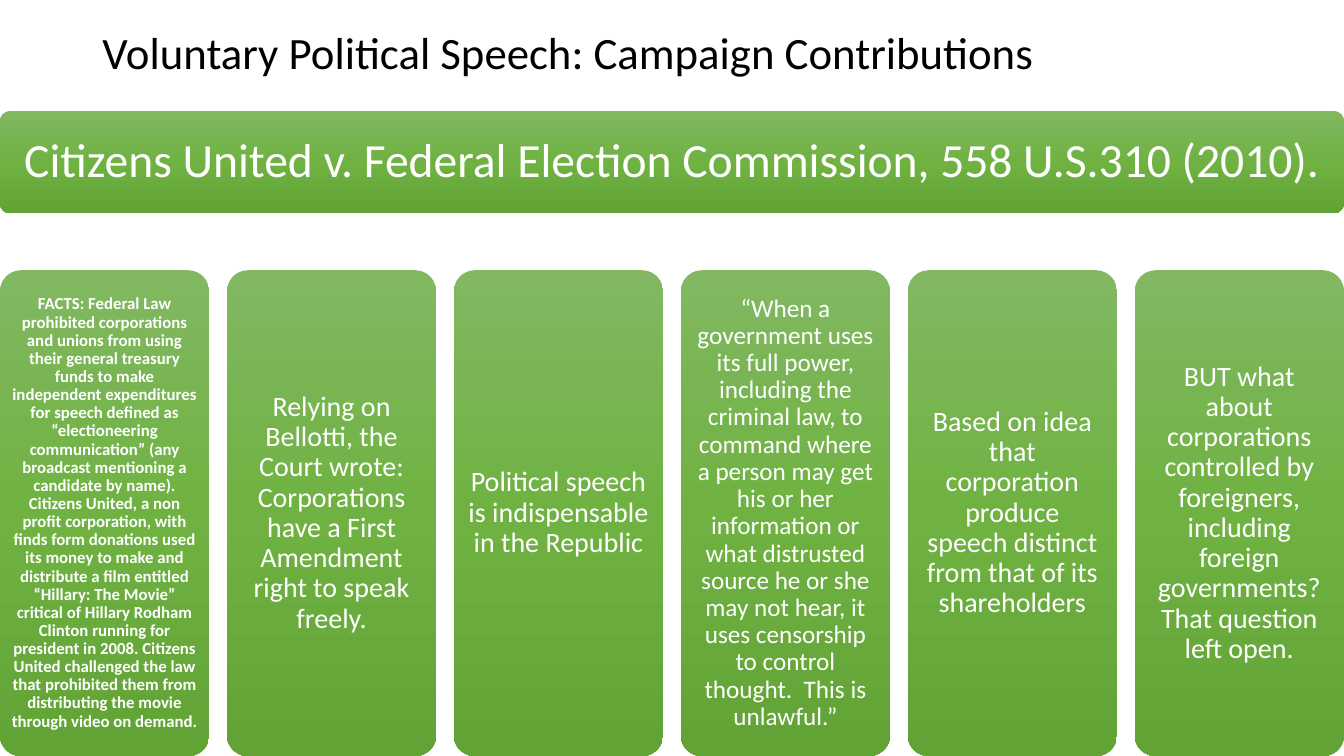
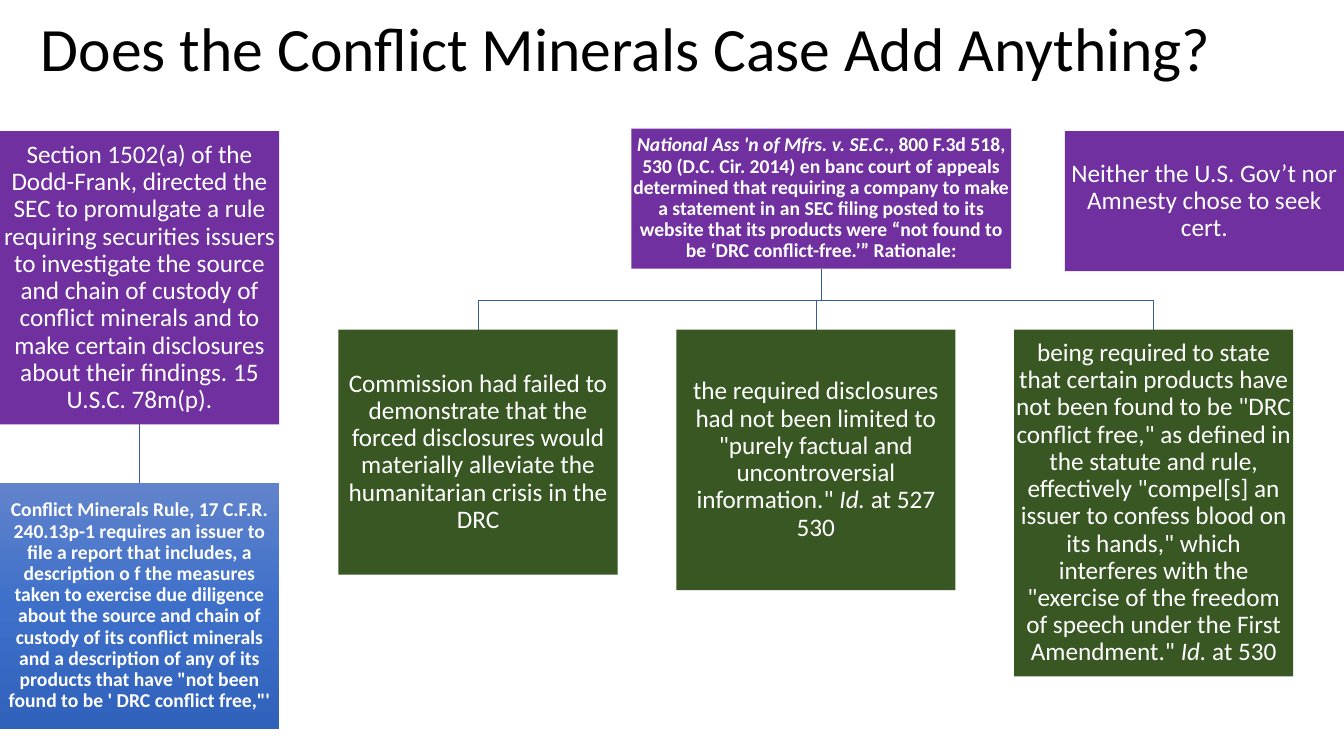
from copy import deepcopy

from pptx import Presentation
from pptx.dml.color import RGBColor as RGB
from pptx.enum.shapes import MSO_CONNECTOR as Link, MSO_SHAPE as Kind
from pptx.enum.text import MSO_ANCHOR as Anchor, MSO_AUTO_SIZE as Auto, PP_ALIGN as Align
from pptx.oxml.ns import qn
from pptx.util import Pt

# Shared style
WHITE = RGB(0xFF, 0xFF, 0xFF)
BLACK = RGB(0x00, 0x00, 0x00)
PURPLE = RGB(0x70, 0x30, 0xA0)
FOREST = RGB(0x38, 0x57, 0x23)
LINE = RGB(0x36, 0x5B, 0x9D)
GREEN = (RGB(0x81, 0xB8, 0x61), RGB(0x6F, 0xB2, 0x42), RGB(0x62, 0xA3, 0x36))
BLUE = (RGB(0x61, 0x83, 0xCB), RGB(0x3E, 0x70, 0xCA), RGB(0x30, 0x62, 0xBB))
FONT = "Calibri"
WIDE, HIGH = 960, 540

# Slide 1 content: text, size, bold
SPEECH = "Voluntary Political Speech: Campaign Contributions"
CASE = "Citizens United v. Federal Election Commission, 558 U.S.310 (2010)."
POINTS = [
    ("FACTS: Federal Law prohibited corporations and unions from using their "
     "general treasury funds to make independent expenditures for speech defined "
     "as “electioneering communication” (any broadcast mentioning a candidate by "
     "name). Citizens United, a non profit corporation, with finds form donations "
     "used its money to make and distribute a film entitled “Hillary: The Movie” "
     "critical of Hillary Rodham Clinton running for president in 2008. Citizens "
     "United challenged the law that prohibited them from distributing the movie "
     "through video on demand.", 12, True),
    ("Relying on Bellotti, the Court wrote: Corporations have a First Amendment "
     "right to speak freely.", 20, False),
    ("Political speech is indispensable in the Republic", 20, False),
    ("“When a government uses its full power, including the criminal law, to "
     "command where a person may get his or her information or what distrusted "
     "source he or she may not hear, it uses censorship to control thought.  This "
     "is unlawful.”", 18, False),
    ("Based on idea that corporation produce speech distinct from that of its "
     "shareholders", 20, False),
    ("BUT what about corporations controlled by foreigners, including foreign "
     "governments? That question left open.", 20, False),
]

# Slide 2 content: words between asterisks are italic
MINERALS = "Does the Conflict Minerals Case Add Anything?"
STATUTE = ("Section 1502(a) of the Dodd-Frank, directed the SEC to promulgate a rule "
           "requiring securities issuers to investigate the source and chain of "
           "custody of conflict minerals and to make certain disclosures about their "
           "findings. 15 U.S.C. 78m(p).")
RULE = ("Conflict Minerals Rule, 17 C.F.R. 240.13p-1 requires an issuer to file a "
        "report that includes, a description o f the measures taken to exercise due "
        "diligence about the source and chain of custody of its conflict minerals and "
        "a description of any of its products that have \"not been found to be ' DRC "
        "conflict free,\"'")
RULING = ("*National Ass 'n of Mfrs. v. SE.C*., 800 F.3d 518, 530 (D.C. Cir. 2014) en "
          "banc court of appeals determined that requiring a company to make a "
          "statement in an SEC filing posted to its website that its products were "
          "“not found to be ‘DRC conflict-free.’” Rationale:")
CERT = "Neither the U.S. Gov’t nor Amnesty chose to seek cert."
REASONS = [  # text, box height
    ("Commission had failed to demonstrate that the forced disclosures would "
     "materially alleviate the humanitarian crisis in the DRC", 175),
    ("the required disclosures had not been limited to \"purely factual and "
     "uncontroversial information.\" *Id. *at 527 530", 186),
    ("being required to state that certain products have not been found to be \"DRC "
     "conflict free,\" as defined in the statute and rule, effectively \"compel[s] an "
     "issuer to confess blood on its hands,\" which interferes with the \"exercise of "
     "the freedom of speech under the First Amendment.\" *Id. *at 530", 247.6),
]


def style(obj, **vals):
    for key, val in vals.items():
        setattr(obj, key, val)


def write(frame, text, size, color, align, inset, bold=False):
    style(frame, word_wrap=True, auto_size=Auto.NONE, vertical_anchor=Anchor.MIDDLE,
          **inset)
    para = frame.paragraphs[0]
    style(para, alignment=align, line_spacing=0.9)
    for num, part in enumerate(text.split("*")):
        if part:
            run = para.add_run()
            run.text = part
            style(run.font, name=FONT, size=Pt(size), bold=bold, italic=num % 2 == 1)
            run.font.color.rgb = color


def pad(side, edge):
    return dict(margin_left=Pt(side), margin_right=Pt(side),
                margin_top=Pt(edge), margin_bottom=Pt(edge))


def add_page(deck, text, size, area):
    page = deck.slides.add_slide(deck.slide_layouts[5])
    head = page.shapes.title
    style(head, **dict(zip(("left", "top", "width", "height"), map(Pt, area))))
    write(head.text_frame, text, size, BLACK, Align.LEFT, pad(7.2, 3.6))
    return page.shapes


def paint(shape, fill):
    """Fill with one colour, or with a top-to-bottom blend of three."""
    if isinstance(fill, RGB):
        shape.fill.solid()
        shape.fill.fore_color.rgb = fill
        return
    shape.fill.gradient()
    shape.fill.gradient_angle = 270
    stops = next(shape._element.spPr.iter(qn("a:gsLst")))
    stops.insert(1, deepcopy(stops[0]))
    for stop, color, spot in zip(shape.fill.gradient_stops, fill, (0, 0.5, 1)):
        stop.color.rgb = color
        stop.position = spot


def add_box(shapes, kind, area, fill, text, size, bold=False, ratio=0.05):
    box = shapes.add_shape(kind, *map(Pt, area))
    box.shadow.inherit = False
    if kind == Kind.ROUNDED_RECTANGLE:
        box.adjustments[0] = 0.1
    paint(box, fill)
    box.line.fill.background()
    inset = ratio * size
    write(box.text_frame, text, size, WHITE, Align.CENTER, pad(inset, inset), bold)
    return box


def draw_line(item):
    item.line.color.rgb = LINE
    item.line.width = Pt(0.5)


def add_speech(deck):
    shapes = add_page(deck, SPEECH, 32, (66, 0, 828, 79))
    form = Kind.ROUNDED_RECTANGLE
    add_box(shapes, form, (0, 79.3, WIDE, 73), GREEN, CASE, 34, ratio=0.3)
    # Six equal columns across the slide
    gap, top = 12.6, 193
    wide = (WIDE - gap * (len(POINTS) - 1)) / len(POINTS)
    for num, (text, size, bold) in enumerate(POINTS):
        area = (num * (wide + gap), top, wide, HIGH - top)
        add_box(shapes, form, area, GREEN, text, size, bold, 0.3)


def add_minerals(deck):
    shapes = add_page(deck, MINERALS, 44, (22, 0, 872, 74))
    form, wide, top = Kind.RECTANGLE, 199.4, 93.7

    # Statute and its rule
    law = add_box(shapes, form, (0, top, wide, 209.4), PURPLE, STATUTE, 18)
    rule = add_box(shapes, form, (0, 345, wide, 175.7), BLUE, RULE, 14, True)
    link = shapes.add_connector(Link.STRAIGHT, 0, 0, 0, 0)
    link.begin_connect(law, 2)
    link.end_connect(rule, 0)
    link._element.spPr.get_or_add_ln()
    draw_line(link)
    link._element.spPr.append(link._element.makeelement(qn("a:effectLst"), {}))

    # Ruling, branching to its reasons
    left, high, case = 451, 100, 271.4
    add_box(shapes, form, (left, 91.9, case, high), PURPLE, RULING, 14, True)
    mid, base, bend, row = left + case / 2, 91.9 + high, 214.4, 235.5
    for num, (text, tall) in enumerate(REASONS):
        spot = 241.8 + num * 241.3
        end = spot + wide / 2
        path = [(mid, bend), (end, bend), (end, row)]
        pen = shapes.build_freeform(Pt(mid), Pt(base))
        pen.add_line_segments([(Pt(x), Pt(y)) for x, y in path], close=False)
        branch = pen.convert_to_shape()
        branch.shadow.inherit = False
        branch.fill.background()
        draw_line(branch)
        add_box(shapes, form, (spot, row, wide, tall), FOREST, text, 18)

    # Outcome
    add_box(shapes, form, (WIDE - wide, top, wide, high), PURPLE, CERT, 18)


def main():
    deck = Presentation()
    style(deck, slide_width=Pt(WIDE), slide_height=Pt(HIGH))
    add_speech(deck)
    add_minerals(deck)
    deck.save("out.pptx")


if __name__ == "__main__":
    main()
